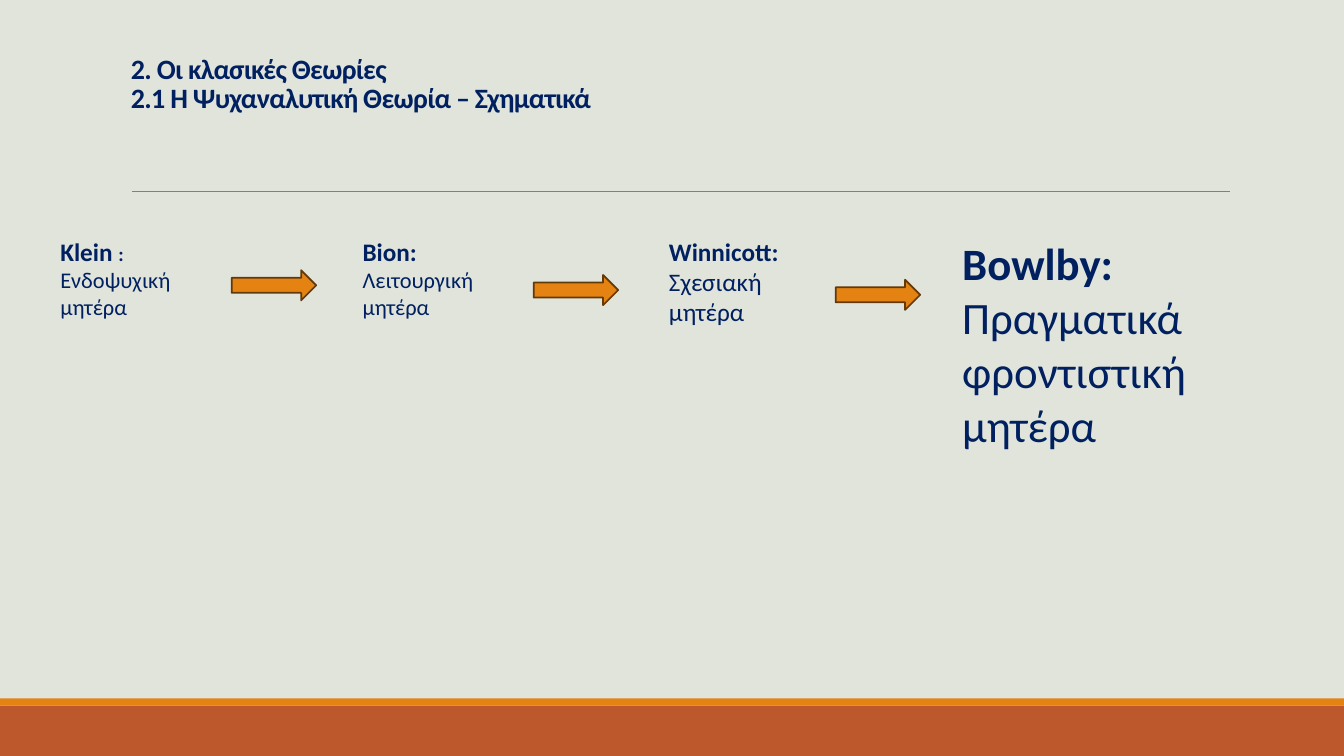
from lxml import etree
from pptx import Presentation
from pptx.dml.color import RGBColor
from pptx.enum.shapes import MSO_CONNECTOR, MSO_SHAPE
from pptx.enum.text import MSO_ANCHOR, MSO_AUTO_SIZE
from pptx.oxml.ns import qn
from pptx.util import Cm, Pt

RECTANGLE = MSO_SHAPE.RECTANGLE
RIGHT_ARROW = MSO_SHAPE.RIGHT_ARROW
STRAIGHT = MSO_CONNECTOR.STRAIGHT
BOTTOM = MSO_ANCHOR.BOTTOM
GROW = MSO_AUTO_SIZE.SHAPE_TO_FIT_TEXT

ORANGE = "E48312"
NAVY = "002060"


def color(hex_code):
    return RGBColor.from_string(hex_code)


def add_run(paragraph, text, size, bold):
    run = paragraph.add_run()
    run.text = text
    font_format = {"name": "Calibri", "size": Pt(size), "bold": bold}
    for attribute, value in font_format.items():
        setattr(run.font, attribute, value)
    run.font.color.rgb = color(NAVY)
    return run


prs = Presentation()
prs.slide_width, prs.slide_height = Cm(33.87), Cm(19.05)
slide = prs.slides.add_slide(prs.slide_layouts[6])
slide.background.fill.solid()
slide.background.fill.fore_color.rgb = color("E0E4DB")

# Footer bands: top, height, fill
for top, height, fill in [(17.78, 1.27, "BD582C"), (17.6, 0.18, ORANGE)]:
    band = slide.shapes.add_shape(RECTANGLE, 0, Cm(top), prs.slide_width, Cm(height))
    band.shadow.inherit = False
    band.fill.solid()
    band.fill.fore_color.rgb = color(fill)
    band.line.fill.background()

# Title and the rule below it
title_rule = slide.shapes.add_connector(STRAIGHT, Cm(3.33), Cm(4.82), Cm(31), Cm(4.82))
title_rule.line.color.rgb = color("808080")
title_rule.line.width = Pt(0.5)
etree.SubElement(title_rule.element.spPr, qn("a:effectLst"))

title = slide.shapes.add_textbox(Cm(3.05), Cm(0.79), Cm(27.94), Cm(2.31)).text_frame
title_format = {"word_wrap": True, "vertical_anchor": BOTTOM, "margin_bottom": Cm(0.23)}
for attribute, value in title_format.items():
    setattr(title, attribute, value)
heading = title.paragraphs[0]
heading.line_spacing = 0.85
title_lines = ["2. Οι κλασικές Θεωρίες", "2.1 Η Ψυχαναλυτική Θεωρία – Σχηματικά"]
for number, line in enumerate(title_lines):
    if number:
        heading.add_line_break()
    run = add_run(heading, line, 20, True)
    run.font._element.set("spc", "-50")

# Theorists: left, width, height, runs of (text, size, bold)
theorists = [
    (1.27, 3.81, 2.39, [("Klein ", 18, True), (": ", 14, True),
                        ("Ενδοψυχική μητέρα", 16, False)]),
    (8.89, 4.57, 2.39, [("Bion: ", 18, True), ("Λειτουργική μητέρα", 16, False)]),
    (16.61, 4.57, 2.57, [("Winnicott: ", 18, True), ("Σχεσιακή μητέρα", 18, False)]),
    (24, 6.4, 5.74, [("Bowlby: ", 32, True),
                     ("Πραγματικά φροντιστική μητέρα", 32, False)]),
]
for left, width, height, runs in theorists:
    theorist = slide.shapes.add_textbox(Cm(left), Cm(5.82), Cm(width), Cm(height)).text_frame
    theorist.word_wrap = True
    theorist.auto_size = GROW
    for text, size, bold in runs:
        add_run(theorist.paragraphs[0], text, size, bold)

# One arrow between each pair of neighbours, stepping slightly down
for step in range(len(theorists) - 1):
    arrow = slide.shapes.add_shape(
        RIGHT_ARROW, Cm(5.84 + 7.61 * step), Cm(6.81 + 0.12 * step), Cm(2.13), Cm(0.76))
    arrow.shadow.inherit = False
    arrow.fill.solid()
    arrow.fill.fore_color.rgb = color(ORANGE)
    arrow.line.color.rgb = color("643908")
    arrow.line.width = Pt(1.25)

prs.save("out.pptx")
